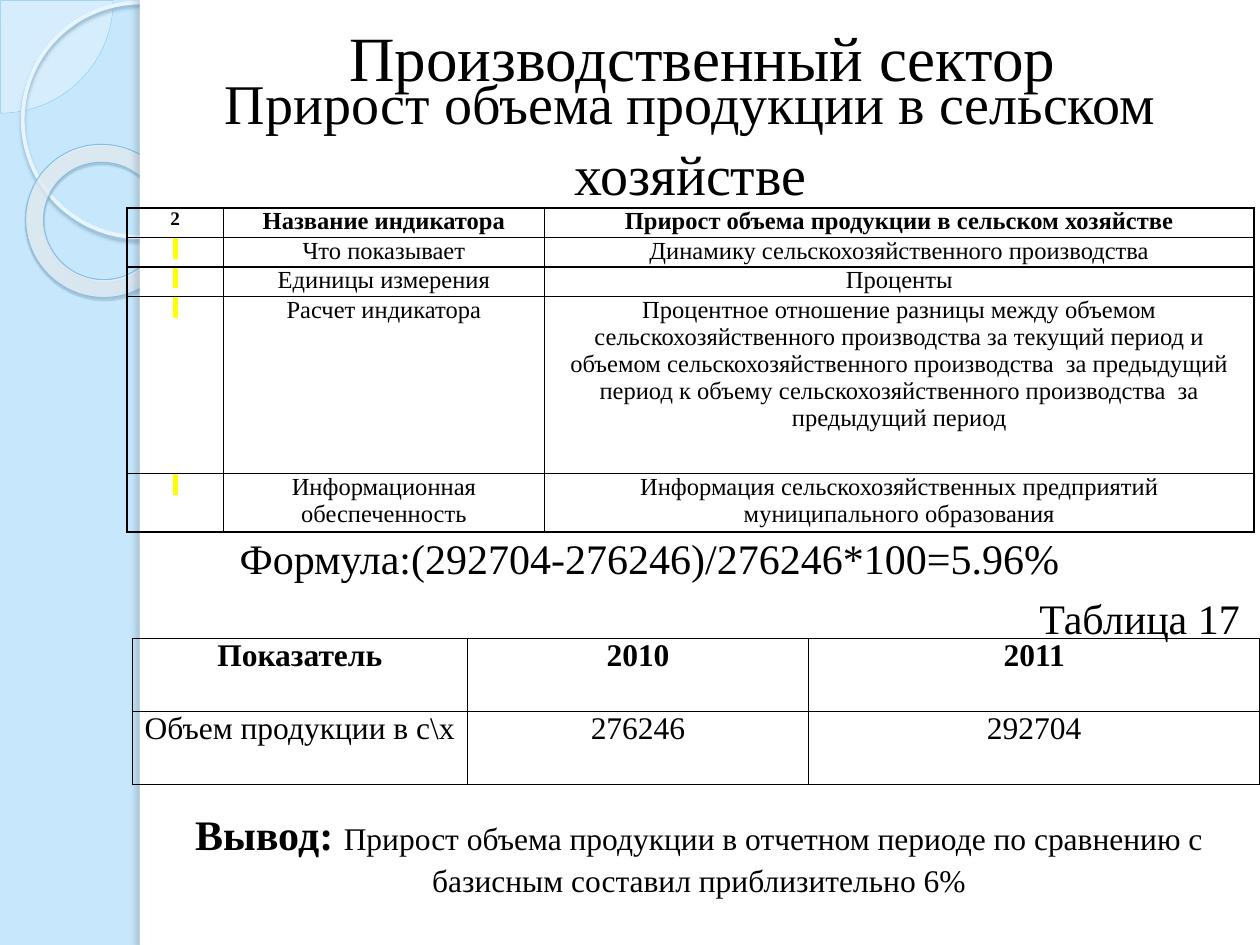
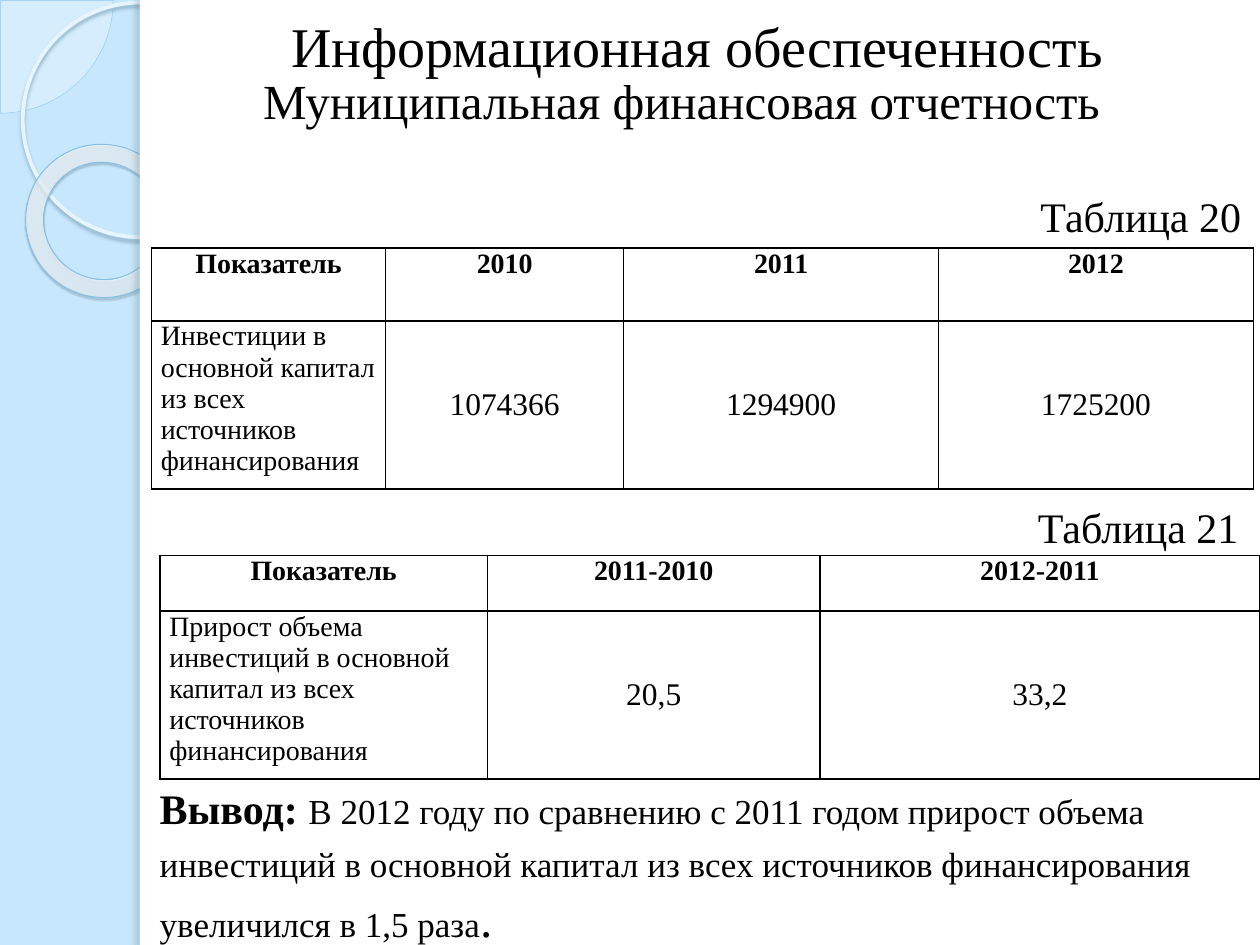
from dataclasses import dataclass

from lxml import etree
from pptx import Presentation
from pptx.dml.color import RGBColor
from pptx.enum.shapes import MSO_SHAPE
from pptx.enum.text import MSO_ANCHOR, PP_ALIGN
from pptx.oxml import parse_xml
from pptx.oxml.ns import nsdecls, qn
from pptx.util import Pt

PIE, RING, OVAL, RECT = MSO_SHAPE.PIE, MSO_SHAPE.DONUT, MSO_SHAPE.OVAL, MSO_SHAPE.RECTANGLE
LEFT, MID = PP_ALIGN.LEFT, PP_ALIGN.CENTER
TOP, CENTER = MSO_ANCHOR.TOP, MSO_ANCHOR.MIDDLE
MARK = chr(160)


@dataclass(frozen=True)
class Theme:
    font: str = "Times New Roman"
    ink: str = "000000"
    sky: str = "C6E7FC"
    paper: str = "FFFFFF"
    pie: str = "F5FBFF"
    rim: str = "92CBEF"
    hoop: str = "E6F5FF"
    edge: str = "85BFE4"
    glow: tuple = ((0, "F8FCFF", 70), (70, "FCFEFF", 55), (100, "8ED3FF", 60))
    mark: str = "FFFF00"
    title: int = 36
    head: int = 32
    sub: int = 28
    note: int = 24
    lead: int = 20
    value: int = 18
    label: int = 16
    small: int = 14
    tag: int = 11
    space: float = 1.05


THEME = Theme()


def rgb(code):
    return RGBColor.from_string(code)


def tint(code, alpha):
    return f'<a:srgbClr val="{code}"><a:alpha val="{alpha * 1000}"/></a:srgbClr>'


def style(font, size, bold=False):
    font.name, font.size, font.bold = THEME.font, Pt(size), bold
    font.color.rgb = rgb(THEME.ink)


def add_form(slide, kind, box, fill=None, line=None, shade=None):
    form = slide.shapes.add_shape(kind, *map(Pt, box))
    form.shadow.inherit = False
    if fill:
        form.fill.solid()
        form.fill.fore_color.rgb = rgb(fill)
    else:
        form.fill.background()
    if line:
        form.line.color.rgb = rgb(line[0])
        form.line.width = Pt(line[1])
    else:
        form.line.fill.background()
    if shade:
        code, alpha, blur, dist, angle = shade
        form._element.spPr.find(qn("a:effectLst")).append(parse_xml(
            f'<a:outerShdw {nsdecls("a")} blurRad="{Pt(blur)}" dist="{Pt(dist)}" '
            f'dir="{angle * 60000}" algn="tl" rotWithShape="0">{tint(code, alpha)}</a:outerShdw>'))
    return form


def add_frame(slide):
    back = slide.background.fill
    back.solid()
    back.fore_color.rgb = rgb(THEME.sky)

    pie = add_form(slide, PIE, (-64, -64, 128.7, 128.7), THEME.pie, (THEME.rim, 0.25))
    pie.adjustments[0], pie.adjustments[1] = 0, 54
    code = pie._element.spPr.find(qn("a:solidFill"))[0]
    etree.SubElement(code, qn("a:alpha"), val="33000")

    add_form(slide, OVAL, (13, 1.5, 134, 134), None, (THEME.hoop, 2.15),
             ("88ADC4", 85, 2, 2, 90))

    ring = add_form(slide, RING, (14.4, 82.8, 88.5, 87), None, (THEME.edge, 0.58),
                    ("3F5767", 35, 1, 1.2, 75))
    ring.adjustments[0] = 0.118
    ring.rotation = 38.6
    stops = "".join(f'<a:gs pos="{at * 1000}">{tint(code, alpha)}</a:gs>'
                    for at, code, alpha in THEME.glow)
    props = ring._element.spPr
    props.replace(props.find(qn("a:noFill")), parse_xml(
        f'<a:gradFill {nsdecls("a")} rotWithShape="1"><a:gsLst>{stops}</a:gsLst>'
        '<a:path path="circle"><a:fillToRect l="-408000" t="-50000" r="508000" b="150000"/>'
        '</a:path></a:gradFill>'))

    add_form(slide, RECT, (80, 0, 640, 540), THEME.paper)
    add_form(slide, RECT, (80, 0, 5.8, 540), THEME.paper, None, ("61737F", 25, 3, 3, 180))


def add_text(slide, box, runs, align=MID, wrap=True, space=THEME.space):
    frame = slide.shapes.add_textbox(*map(Pt, box)).text_frame
    frame.word_wrap = wrap
    par = frame.paragraphs[0]
    par.alignment, par.line_spacing = align, space
    for text, size, bold in runs:
        run = par.add_run()
        run.text = text
        if len(runs) > 1:
            style(run.font, size, bold)
    if len(runs) == 1:
        style(par.font, *runs[0][1:])


def add_line(slide, box, text, size, align=MID, space=THEME.space):
    add_text(slide, box, [(text, size, False)], align, False, space)


def add_label(slide, left, top, number):
    add_line(slide, (left, top, 130, 36), f"Таблица {number}", THEME.note, LEFT)


def fill_cell(cell, text, size, bold=False, align=MID, anchor=TOP):
    cell.margin_left = cell.margin_right = Pt(5.4)
    cell.margin_top = cell.margin_bottom = 0
    cell.vertical_anchor = anchor
    cell.fill.background()
    props = cell._tc.get_or_add_tcPr()
    for spot, side in enumerate("LRTB"):
        props.insert(spot, parse_xml(
            f'<a:ln{side} {nsdecls("a")} w="{Pt(1)}"><a:solidFill>'
            f'<a:srgbClr val="{THEME.ink}"/></a:solidFill></a:ln{side}>'))
    par = cell.text_frame.paragraphs[0]
    par.alignment = align
    run = par.add_run()
    run.text = text
    style(par.font, size, bold)
    if text == MARK:
        style(run.font, size, bold)
        run._r.get_or_add_rPr().find(qn("a:solidFill")).addnext(parse_xml(
            f'<a:highlight {nsdecls("a")}><a:srgbClr val="{THEME.mark}"/></a:highlight>'))


def add_grid(slide, spot, cols, rows, data, look):
    shape = slide.shapes.add_table(len(rows), len(cols), *map(Pt, (*spot, sum(cols), sum(rows))))
    table = shape.table
    table.first_row = table.horz_banding = False
    for col, width in zip(table.columns, cols):
        col.width = Pt(width)
    for row, height in zip(table.rows, rows):
        row.height = Pt(height)
    for r, line in enumerate(data):
        for c, text in enumerate(line):
            fill_cell(table.cell(r, c), text, **look(r, c))


def facts_look(r, c):
    return {"size": THEME.small if c else THEME.tag, "bold": r == 0}


def plain_look(r, c):
    return {"size": THEME.value, "bold": r == 0}


def money_look(r, c):
    if r == 0:
        return {"size": THEME.label, "bold": True}
    if c == 0:
        return {"size": THEME.label, "align": LEFT}
    return {"size": THEME.value, "anchor": CENTER}


def farm_slide(slide):
    add_line(slide, (124, 7, 555, 50), "Производственный сектор", THEME.title, space=1)
    add_label(slide, 586.8, 333.4, 17)
    add_line(slide, (127.4, 299.5, 487.4, 36),
             "Формула:(292704-276246)/276246*100=5.96%", THEME.note)
    add_grid(slide, (72.7, 118.8), (54.9, 183.6, 405.4), (16.9, 16.9, 16.9, 101, 33.6), [
        ("2", "Название индикатора", "Прирост объема продукции в сельском хозяйстве"),
        (MARK, "Что показывает", "Динамику сельскохозяйственного производства"),
        (MARK, "Единицы измерения", "Проценты"),
        (MARK, "Расчет индикатора",
         "Процентное отношение разницы между объемом сельскохозяйственного производства "
         "за текущий период и объемом сельскохозяйственного производства  за предыдущий "
         "период к объему сельскохозяйственного производства  за предыдущий период"),
        (MARK, "Информационная обеспеченность",
         "Информация сельскохозяйственных предприятий муниципального образования"),
    ], facts_look)
    add_text(slide, (61.2, 33.8, 666.7, 85),
             [("Прирост объема продукции в сельском хозяйстве", THEME.head, False)])
    add_grid(slide, (75.6, 365), (191.5, 195, 257.8), (41.7, 41.7), [
        ("Показатель", "2010", "2011"),
        ("Объем продукции в с\\х", "276246", "292704"),
    ], plain_look)
    add_text(slide, (82, 457.2, 635, 58.3), [
        ("Вывод: ", THEME.note, True),
        ("Прирост объема продукции в отчетном периоде по сравнению с базисным "
         "составил приблизительно 6%", THEME.value, False)])


def fund_slide(slide):
    add_line(slide, (121, 3, 555, 45), "Информационная обеспеченность", THEME.head, space=1)
    add_line(slide, (143.3, 35.3, 497.5, 41), "Муниципальная финансовая отчетность",
             THEME.sub, LEFT)
    add_grid(slide, (86.5, 141.8), (133.9, 136, 180, 179.8), (41.6, 95.9), [
        ("Показатель", "2010", "2011", "2012"),
        ("Инвестиции в основной капитал из всех источников финансирования",
         "1074366", "1294900", "1725200"),
    ], money_look)
    add_label(slide, 587.5, 103.7, 20)
    add_label(slide, 586, 281.5, 21)
    add_grid(slide, (91.4, 317.5), (187.2, 190, 251.3), (31.7, 95.9), [
        ("Показатель", "2011-2010", "2012-2011"),
        ("Прирост объема инвестиций в основной капитал из всех источников финансирования",
         "20,5", "33,2"),
    ], money_look)
    add_text(slide, (84.2, 442, 628.6, 99.4), [
        ("Вывод: ", THEME.note, True),
        ("В 2012 году по сравнению с 2011 годом прирост объема инвестиций в основной "
         "капитал из всех источников финансирования", THEME.lead, False),
        (" ", THEME.note, False),
        ("увеличился в 1,5 раза", THEME.lead, False),
        (".", THEME.sub, False)], LEFT)


def main():
    deck = Presentation()
    deck.slide_width, deck.slide_height = Pt(720), Pt(540)
    for build in (farm_slide, fund_slide):
        slide = deck.slides.add_slide(deck.slide_layouts[6])
        add_frame(slide)
        build(slide)
    deck.save("out.pptx")


if __name__ == "__main__":
    main()
